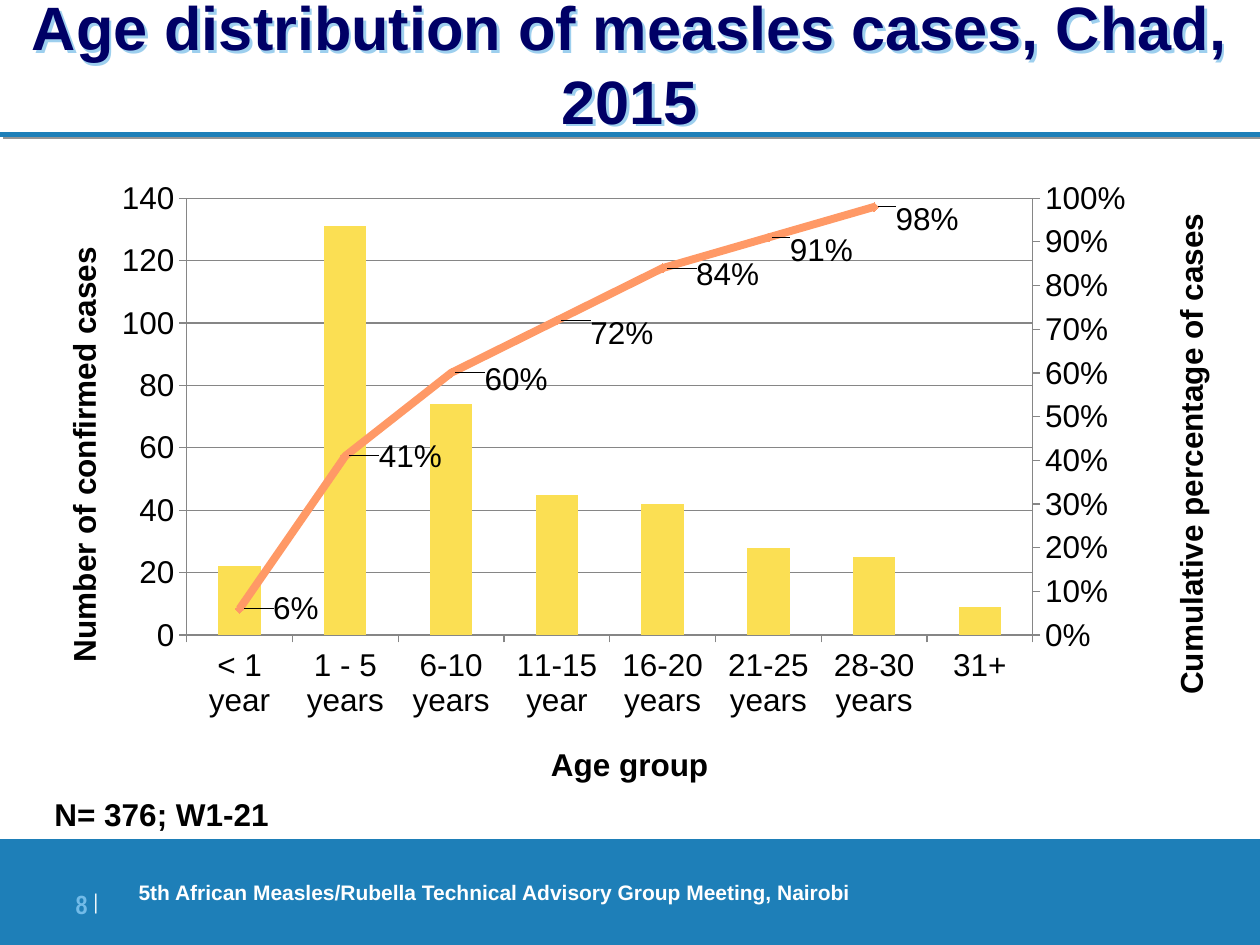
from copy import deepcopy

from pptx import Presentation
from pptx.chart.axis import ValueAxis
from pptx.chart.data import CategoryChartData
from pptx.dml.color import RGBColor
from pptx.enum.chart import XL_CHART_TYPE, XL_LABEL_POSITION, XL_MARKER_STYLE, XL_TICK_MARK
from pptx.enum.shapes import MSO_CONNECTOR, MSO_SHAPE
from pptx.enum.text import MSO_ANCHOR, PP_ALIGN
from pptx.oxml import parse_xml
from pptx.oxml.ns import qn
from pptx.util import Pt

BARS = XL_CHART_TYPE.COLUMN_CLUSTERED
RIGHT = XL_LABEL_POSITION.RIGHT
DIAMOND = XL_MARKER_STYLE.DIAMOND
OUT, NONE = XL_TICK_MARK.OUTSIDE, XL_TICK_MARK.NONE
STRAIGHT = MSO_CONNECTOR.STRAIGHT
RECT = MSO_SHAPE.RECTANGLE
MIDDLE, TOP = MSO_ANCHOR.MIDDLE, MSO_ANCHOR.TOP
LEFT, CENTER, END = PP_ALIGN.LEFT, PP_ALIGN.CENTER, PP_ALIGN.RIGHT

WHITE = RGBColor(0xFF, 0xFF, 0xFF)
BLACK = RGBColor(0, 0, 0)
NAVY = RGBColor(0, 0, 0x66)
BLUE = RGBColor(0x1E, 0x7F, 0xB8)
SKY = RGBColor(0x72, 0xBB, 0xE8)
PALE = RGBColor(0x9D, 0xCF, 0xEE)
GRAY = RGBColor(0x96, 0x96, 0x96)
RULE = RGBColor(0x86, 0x86, 0x86)
YELLOW = RGBColor(0xFB, 0xDF, 0x53)
ORANGE = RGBColor(0xFF, 0x99, 0x66)

AGES = ["< 1 year", "1 - 5 years", "6-10 years", "11-15 year",
        "16-20 years", "21-25 years", "28-30 years", "31+"]
CASES = [22, 131, 74, 45, 42, 28, 25, 9]
SHARES = [0.06, 0.41, 0.6, 0.72, 0.84, 0.91, 0.98, None]
SHIFTS = [(0.02, 0), (0.02, 0), (0.02, 0.01), (0.02, 0.02),
          (0.02, 0.01), (0.01, 0.02), (0.01, 0.02)]

C_NS = 'xmlns:c="http://schemas.openxmlformats.org/drawingml/2006/chart"'
A_NS = 'xmlns:a="http://schemas.openxmlformats.org/drawingml/2006/main"'


def shade(shape, color, dist, turn):
    shape._element.spPr.append(parse_xml(
        f'<a:effectLst {A_NS}><a:outerShdw dist="{Pt(dist)}" dir="{turn * 60000}" algn="ctr">'
        f'<a:srgbClr val="{color}"/></a:outerShdw></a:effectLst>'))


def style(font, size, color, bold=True, name="Arial"):
    font.size, font.bold, font.name = Pt(size), bold, name
    font.color.rgb = color


def add_text(slide, box, text, size, color, align=LEFT, anchor=TOP, inset=0):
    shape = slide.shapes.add_textbox(*map(Pt, box))
    frame = shape.text_frame
    frame.word_wrap = True
    frame.vertical_anchor = anchor
    frame.margin_left = frame.margin_right = Pt(inset)
    frame.margin_top = frame.margin_bottom = Pt(inset / 2)
    line = frame.paragraphs[0]
    line.text, line.alignment = text, align
    style(line.font, size, color)
    return shape


def add_header(slide, x, y, w, h):
    line = slide.shapes.add_connector(STRAIGHT, Pt(x), Pt(y + h), Pt(x + w), Pt(y + h))
    line.line.color.rgb, line.line.width = BLUE, Pt(3)
    shade(line, GRAY, 2.2, 27)
    title = add_text(slide, (x, y - 6, w, 84), "Age distribution of measles cases, Chad, 2015",
                     35, NAVY, CENTER, MIDDLE)
    shade(title, PALE, 2, 45)


def add_footer(slide, x, y, w, h):
    band = slide.shapes.add_shape(RECT, Pt(x), Pt(y), Pt(w), Pt(h))
    band.shadow.inherit = False
    band.fill.solid()
    band.fill.fore_color.rgb = BLUE
    band.line.fill.background()
    frame = band.text_frame
    frame.margin_left, frame.vertical_anchor = Pt(79.2), MIDDLE
    line = frame.paragraphs[0]
    line.text = "5th African Measles/Rubella Technical Advisory Group Meeting, Nairobi"
    line.alignment = LEFT
    style(line.font, 12, WHITE)
    page = add_text(slide, (x + 28, y + 22.3, 28, 26), "", 15, SKY, END)
    line = page.text_frame.paragraphs[0]
    for text, size, color, bold in (("8 ", 15, SKY, True), ("|", 21, WHITE, False)):
        run = line.add_run()
        run.text = text
        style(run.font, size, color, bold, "Arial Narrow")
    run._r.get_or_add_rPr().set("baseline", "14000")


def layout(x, y, size=None):
    parts = [("xMode", "edge"), ("yMode", "edge")] if size else []
    parts += [("x", x), ("y", y)]
    if size and size[0]:
        parts = [("layoutTarget", "inner")] + parts + [("w", size[0]), ("h", size[1])]
    inner = "".join(f'<c:{tag} val="{val}"/>' for tag, val in parts)
    return parse_xml(f"<c:layout {C_NS}><c:manualLayout>{inner}</c:manualLayout></c:layout>")


def name_axis(axis, text, x, y):
    axis.has_title = True
    title = axis.axis_title
    frame = title.text_frame
    frame.text = text
    style(frame.paragraphs[0].font, 18, BLACK)
    node = title._element
    for old in node.findall(qn("c:layout")):
        node.remove(old)
    node.find(qn("c:tx")).addnext(layout(x, y, (0, 0)))
    if isinstance(axis, ValueAxis):
        frame._txBody.find(qn("a:bodyPr")).set("rot", "-5400000")


def split_line(chart):
    area = chart._chartSpace.chart.plotArea
    bars = area.find(qn("c:barChart"))
    row = bars.findall(qn("c:ser"))[1]
    for old in row.findall(qn("c:invertIfNegative")):
        row.remove(old)
    lines = parse_xml(f'<c:lineChart {C_NS}><c:grouping val="standard"/><c:varyColors val="0"/>'
                      '<c:marker val="1"/><c:axId val="501"/><c:axId val="502"/></c:lineChart>')
    lines.insert(2, row)
    bars.addnext(lines)
    cat, val = area.find(qn("c:catAx")), area.find(qn("c:valAx"))
    cat2, val2 = deepcopy(cat), deepcopy(val)
    val.addnext(val2)
    val2.addnext(cat2)
    for node, own, other in ((cat2, "501", "502"), (val2, "502", "501")):
        node.find(qn("c:axId")).set("val", own)
        node.find(qn("c:crossAx")).set("val", other)
    cat2.find(qn("c:delete")).set("val", "1")
    val2.find(qn("c:axPos")).set("val", "r")
    val2.find(qn("c:crosses")).set("val", "max")
    for old in area.findall(qn("c:layout")):
        area.remove(old)
    area.insert(0, layout(0.137, 0.048, (0.701, 0.684)))
    return ValueAxis(val2)


def add_chart(slide, x, y, w, h):
    data = CategoryChartData()
    data.categories = AGES
    data.add_series("Series 1", CASES, "General")
    data.add_series("Series 2", SHARES, "0%")
    chart = slide.shapes.add_chart(BARS, Pt(x), Pt(y), Pt(w), Pt(h), data).chart
    chart.has_legend = chart.has_title = False
    style(chart.font, 18, BLACK, False)
    left, base = chart.value_axis, chart.category_axis
    right = split_line(chart)
    for axis, top, step, form in ((left, 140, 20, "General"), (right, 1, 0.1, "0%")):
        axis.minimum_scale, axis.maximum_scale, axis.major_unit = 0, top, step
        axis.tick_labels.number_format = form
        axis.tick_labels.number_format_is_linked = False
    for axis in (left, base, right):
        axis.major_tick_mark, axis.minor_tick_mark = OUT, NONE
        axis.format.line.color.rgb = RULE
    left.major_gridlines.format.line.color.rgb = RULE
    right.has_major_gridlines = False
    name_axis(left, "Number of confirmed cases", 0.03, 0.116)
    name_axis(base, "Age group", 0.434, 0.893)
    name_axis(right, "Cumulative percentage of cases", 0.947, 0.063)

    bars, lines = chart.plots
    bars.gap_width, bars.vary_by_categories = 150, False
    fill = bars.series[0].format.fill
    fill.solid()
    fill.fore_color.rgb = YELLOW
    curve = lines.series[0]
    curve.smooth = False
    curve.format.line.color.rgb, curve.format.line.width = ORANGE, Pt(4.5)
    mark = curve.marker
    mark.style, mark.size = DIAMOND, 5
    mark.format.fill.solid()
    mark.format.fill.fore_color.rgb = ORANGE
    mark.format.line.color.rgb = ORANGE
    tags = curve.data_labels
    tags.show_value, tags.position = True, RIGHT
    tags.number_format, tags.number_format_is_linked = "0%", False
    for i in range(len(SHIFTS)):
        curve.points[i].data_label.position = RIGHT
    for node, shift in zip(tags._element.findall(qn("c:dLbl")), SHIFTS):
        node.find(qn("c:idx")).addnext(layout(*shift))


def main():
    deck = Presentation()
    deck.slide_width, deck.slide_height = Pt(720), Pt(540)
    slide = deck.slides.add_slide(deck.slide_layouts[6])
    add_header(slide, 0, 0, 720, 77)
    add_footer(slide, 0, 479.5, 720, 60.5)
    add_text(slide, (24, 451, 204, 29), "N= 376; W1-21", 18, BLACK, inset=7.2)
    add_chart(slide, 12.24, 95.76, 689.76, 365)
    deck.save("out.pptx")


if __name__ == "__main__":
    main()
